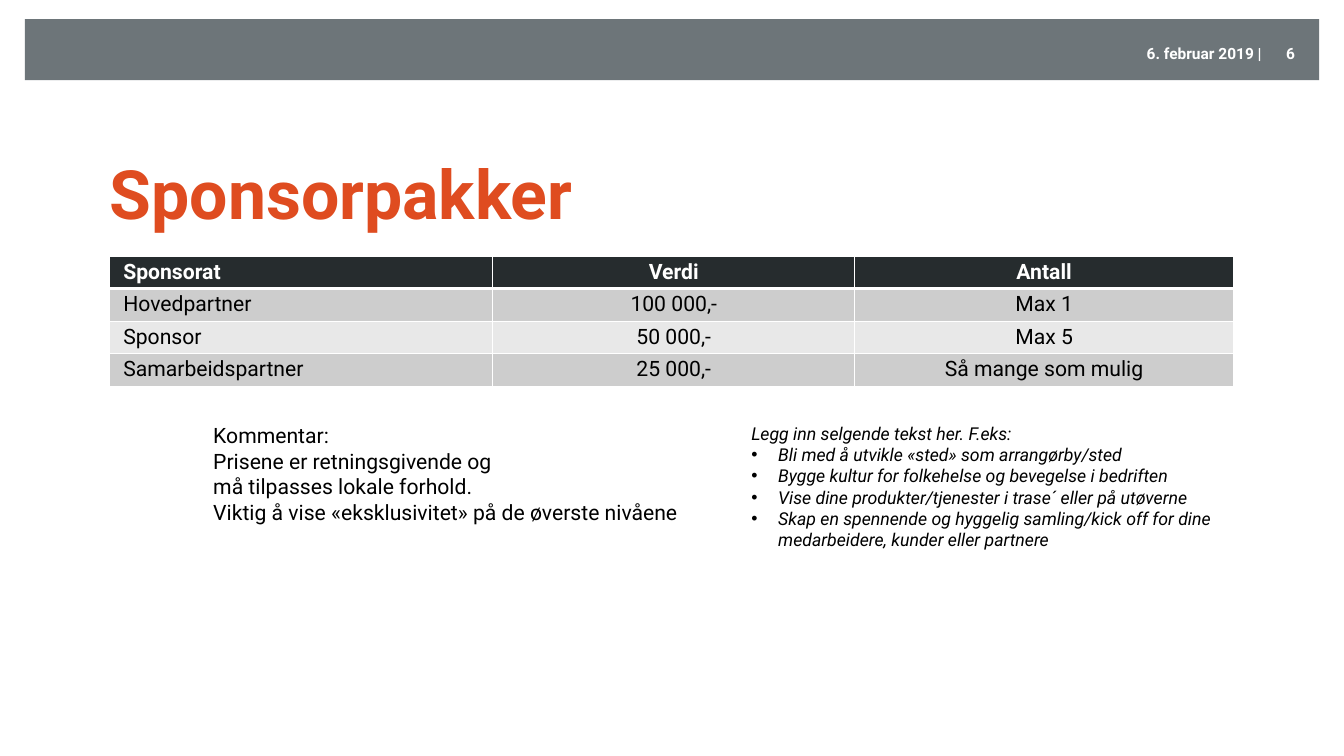
from lxml import etree
from pptx import Presentation, util as u
from pptx.dml.color import RGBColor
from pptx.enum import shapes, text
from pptx.oxml import ns

LEFT, CENTER, RIGHT = text.PP_ALIGN.LEFT, text.PP_ALIGN.CENTER, text.PP_ALIGN.RIGHT
TOP, MIDDLE, BOTTOM = text.MSO_ANCHOR.TOP, text.MSO_ANCHOR.MIDDLE, text.MSO_ANCHOR.BOTTOM

PACKAGES = [
    ["Sponsorat", "Verdi", "Antall"],
    ["Hovedpartner", "100 000,-", "Max 1"],
    ["Sponsor", "50 000,-", "Max 5"],
    ["Samarbeidspartner", "25 000,-", "Så mange som mulig"],
]
COMMENT = [
    "Kommentar:",
    "Prisene er retningsgivende og",
    "må tilpasses lokale forhold.",
    "Viktig å vise «eksklusivitet» på de øverste nivåene",
]
PITCH_INTRO = "Legg inn selgende tekst her. F.eks:"
PITCH = [
    "Bli med å utvikle «sted» som arrangørby/sted",
    "Bygge kultur for folkehelse og bevegelse i bedriften",
    "Vise dine produkter/tjenester i trase´ eller på utøverne",
    "Skap en spennende og hyggelig samling/kick off for dine medarbeidere, kunder eller partnere",
]


def color(hex_string):
    return RGBColor.from_string(hex_string)


def write(paragraph, wording, size, fill="000000", bold=False, italic=False,
          align=LEFT, spacing=None, bullet=False):
    if bullet:
        props = paragraph._p.get_or_add_pPr()
        indent = u.Inches(0.38)
        props.set("marL", str(indent))
        props.set("indent", str(-indent))
        etree.SubElement(props, ns.qn("a:buFont")).set("typeface", "Arial")
        etree.SubElement(props, ns.qn("a:buChar")).set("char", "•")
    paragraph.alignment = align
    if spacing:
        paragraph.line_spacing = spacing
    run = paragraph.add_run()
    run.text = wording
    font = run.font
    font.name, font.size = Deck.font, u.Pt(size)
    font.bold, font.italic = bold, italic
    font.color.rgb = color(fill)


def border_cell(cell, widths):
    """Draw white borders; widths maps the sides L, R, T, B to points."""
    props = cell._tc.get_or_add_tcPr()
    for position, (side, width) in enumerate(widths.items()):
        line = etree.Element(ns.qn(f"a:ln{side}"), w=str(u.Pt(width)))
        fill = etree.SubElement(line, ns.qn("a:solidFill"))
        etree.SubElement(fill, ns.qn("a:srgbClr")).set("val", Deck.white)
        props.insert(position, line)


class Deck:
    font = "Roboto"
    white, grey, orange = "FFFFFF", "6D7579", "DF4C20"
    header, odd_row, even_row = "262C2E", "CDCDCD", "E8E8E8"
    body_size = 21.5

    def __init__(self, width, height):
        self.deck = Presentation()
        self.deck.slide_width, self.deck.slide_height = u.Inches(width), u.Inches(height)
        self.slide = self.deck.slides.add_slide(self.deck.slide_layouts[6])

    def band(self, *box):
        band = self.slide.shapes.add_shape(
            shapes.MSO_SHAPE.RECTANGLE, *map(u.Inches, box))
        band.shadow.inherit = False
        band.fill.solid()
        band.fill.fore_color.rgb = color(self.grey)
        band.line.fill.background()

    def text(self, box, lines, anchor=TOP, inset=True, **style):
        """Add a text box; each line is a string or a (string, format) pair."""
        frame = self.slide.shapes.add_textbox(*map(u.Inches, box)).text_frame
        frame.word_wrap = True
        frame.vertical_anchor = anchor
        if not inset:
            frame.margin_left = frame.margin_right = 0
            frame.margin_top = frame.margin_bottom = 0
        for index, line in enumerate(lines):
            wording, extra = (line, {}) if isinstance(line, str) else line
            paragraph = frame.add_paragraph() if index else frame.paragraphs[0]
            write(paragraph, wording, **style, **extra)

    def table(self, left, top, column_widths, row_height, rows):
        table = self.slide.shapes.add_table(
            len(rows), len(column_widths), u.Inches(left), u.Inches(top),
            u.Inches(sum(column_widths)), u.Inches(row_height * len(rows))).table
        for column, width in zip(table.columns, column_widths):
            column.width = u.Inches(width)
        for r, row in enumerate(rows):
            table.rows[r].height = u.Inches(row_height)
            is_header = r == 0
            fill = self.header if is_header else self.odd_row if r % 2 else self.even_row
            for c, wording in enumerate(row):
                cell = table.cell(r, c)
                cell.margin_left = cell.margin_right = u.Inches(0.19)
                cell.margin_top = cell.margin_bottom = u.Inches(0.05)
                cell.fill.solid()
                cell.fill.fore_color.rgb = color(fill)
                border_cell(cell, {"L": 1, "R": 1, "T": 3 if r == 1 else 1,
                                   "B": 3 if is_header else 1})
                write(cell.text_frame.paragraphs[0], wording, self.body_size,
                      fill=self.white if is_header else "000000",
                      bold=is_header, align=CENTER if c else LEFT)


def main():
    page = Deck(18.96, 10.66)
    page.band(0.35, 0.27, 18.26, 0.86)
    for left, width, wording in [(12.67, 5.13, "6. februar 2019 |"), (17.8, 0.47, "6")]:
        page.text((left, 0.62, width, 0.26), [wording], anchor=MIDDLE, inset=False,
                  size=15.7, fill=page.white, bold=True, align=RIGHT)
    page.text((1.55, 1.21, 15.85, 2.09), ["Sponsorpakker"], anchor=BOTTOM, inset=False,
              size=69, fill=page.orange, bold=True, spacing=0.9)
    page.table(1.55, 3.61, [5.4, 5.11, 5.34], 0.45, PACKAGES)
    page.text((2.91, 5.91, 7.59, 1.55), COMMENT, size=page.body_size)
    bullets = [(point, {"bullet": True}) for point in PITCH]
    page.text((10.5, 5.91, 7.44, 2.28), [PITCH_INTRO] + bullets, size=18, italic=True)
    page.deck.save("out.pptx")


if __name__ == "__main__":
    main()
